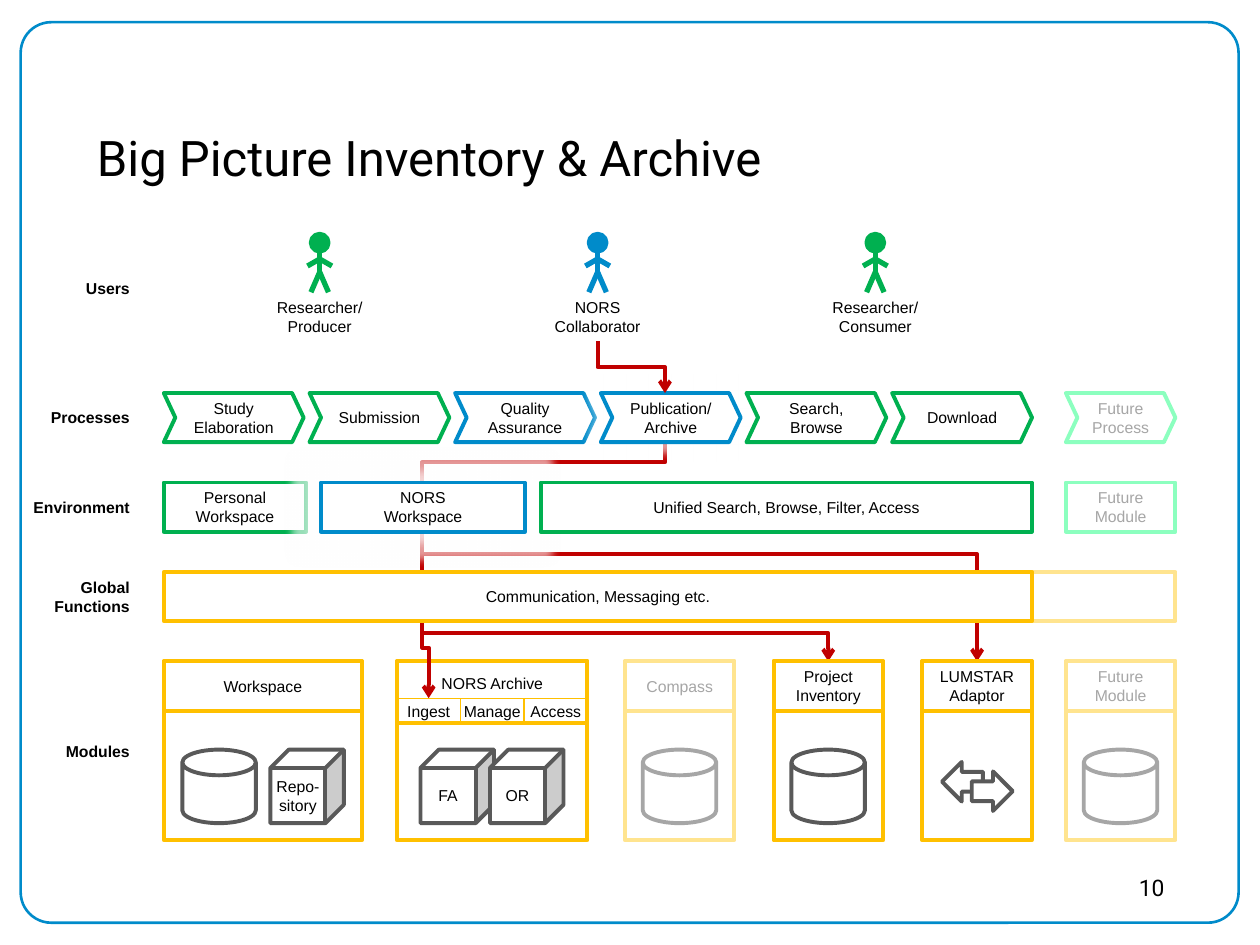
from lxml import etree
from pptx import Presentation
from pptx.dml.color import RGBColor
from pptx.enum.shapes import MSO_CONNECTOR, MSO_SHAPE
from pptx.enum.text import MSO_ANCHOR, PP_ALIGN
from pptx.oxml.ns import qn
from pptx.util import Pt

RECT, CHEVRON, CUBE, CAN = MSO_SHAPE.RECTANGLE, MSO_SHAPE.CHEVRON, MSO_SHAPE.CUBE, MSO_SHAPE.CAN
LEFT_ARROW, OVAL, ROUNDED = MSO_SHAPE.LEFT_ARROW, MSO_SHAPE.OVAL, MSO_SHAPE.ROUNDED_RECTANGLE
STRAIGHT, ELBOW = MSO_CONNECTOR.STRAIGHT, MSO_CONNECTOR.ELBOW
MIDDLE, TOP = MSO_ANCHOR.MIDDLE, MSO_ANCHOR.TOP
LEFT, CENTER, RIGHT = PP_ALIGN.LEFT, PP_ALIGN.CENTER, PP_ALIGN.RIGHT

BLACK = RGBColor(0x00, 0x00, 0x00)
WHITE = RGBColor(0xFF, 0xFF, 0xFF)
BLUE = RGBColor(0x00, 0x8B, 0xCA)
GREEN = RGBColor(0x00, 0xB0, 0x50)
PALE_GREEN = RGBColor(0x8C, 0xFF, 0xBF)
AMBER = RGBColor(0xFF, 0xC0, 0x00)
PALE_AMBER = RGBColor(0xFF, 0xE4, 0x8F)
RED = RGBColor(0xC0, 0x00, 0x00)
DARK_GRAY = RGBColor(0x59, 0x59, 0x59)
GRAY = RGBColor(0xA6, 0xA6, 0xA6)

ROW_HEIGHT = 28.1
PROCESS_TOP, ENVIRONMENT_TOP, GLOBAL_TOP, MODULE_TOP = (224.6 + 51.12 * row for row in range(4))
MODULE_HEIGHT = 102.2
GRID_LEFT, GRID_RIGHT = 93.6, 589.7
FUTURE_LEFT, NARROW = 609.1, 62.6
COMPASS_LEFT, INVENTORY_LEFT, ADAPTOR_LEFT = (357.1 + 84.95 * column for column in range(3))
ICON_TOP, ICON_SIZE = 428.4, 42
ARCHIVE_LEFT, ARCHIVE_WIDTH = 226.8, 108.9
FLOW_X, FLOW_TOP = 241.2, ENVIRONMENT_TOP + ROW_HEIGHT


def write(shape, text, color=BLACK, size=9, font="Arial", bold=False, align=CENTER,
          anchor=MIDDLE, insets=(0, 0, 0, 0), wrap=True):
    frame = shape.text_frame
    frame.word_wrap = wrap
    frame.vertical_anchor = anchor
    (frame.margin_left, frame.margin_top,
     frame.margin_right, frame.margin_bottom) = (Pt(inset) for inset in insets)
    frame.text = text
    for paragraph in frame.paragraphs:
        paragraph.alignment = align
        paragraph.font.name = font
        paragraph.font.size = Pt(size)
        paragraph.font.bold = bold
        paragraph.font.color.rgb = color


def add_block(shapes, kind, left, top, width, height, line, fill=WHITE, weight=2.25):
    block = shapes.add_shape(kind, Pt(left), Pt(top), Pt(width), Pt(height))
    block.shadow.inherit = False
    if fill is None:
        block.fill.background()
    else:
        block.fill.solid()
        block.fill.fore_color.rgb = fill
    block.line.color.rgb = line
    block.line.width = Pt(weight)
    return block


def add_step(shapes, kind, left, top, width, text, line, color=BLACK):
    step = add_block(shapes, kind, left, top, width, ROW_HEIGHT, line)
    if kind == CHEVRON:
        step.adjustments[0] = 0.235
    write(step, text, color, insets=(7.9, 4.3, 7.9, 4.3))
    return step


def add_glow(shape):
    effects = shape._element.spPr.find(qn("a:effectLst"))
    glow = etree.SubElement(effects, qn("a:glow"), rad=str(Pt(10)))
    tint = etree.SubElement(glow, qn("a:srgbClr"), val=str(WHITE))
    etree.SubElement(tint, qn("a:alpha"), val="60000")


def add_label(shapes, left, top, width, height, text, **style):
    label = shapes.add_textbox(Pt(left), Pt(top), Pt(width), Pt(height))
    write(label, text, **{"insets": (7.9, 4.3, 7.9, 4.3), **style})


def add_line(shapes, kind, start, end, color, weight):
    line = shapes.add_connector(kind, *(Pt(value) for value in start + end))
    line.line.color.rgb = color
    line.line.width = Pt(weight)
    etree.SubElement(line._element.spPr, qn("a:effectLst"))
    return line


def add_flow(shapes, start, end, bend=0.5, arrow=True):
    flow = add_line(shapes, ELBOW, start, end, RED, 2.25)
    run, drop = abs(end[0] - start[0]), end[1] - start[1]
    flow.left = Pt((start[0] + end[0] - drop) / 2)
    flow.top = Pt((start[1] + end[1] - run) / 2)
    flow.width, flow.height = Pt(drop), Pt(run)
    properties = flow._element.spPr
    transform = properties.find(qn("a:xfrm"))
    transform.attrib.clear()
    if end[0] > start[0]:
        transform.set("rot", "16200000")
        transform.set("flipH", "1")
    else:
        transform.set("rot", "5400000")
    guides = properties.find(qn("a:prstGeom")).find(qn("a:avLst"))
    etree.SubElement(guides, qn("a:gd"), name="adj1", fmla=f"val {round(bend * 100000)}")
    if arrow:
        etree.SubElement(properties.find(qn("a:ln")), qn("a:tailEnd"), type="arrow")


def add_user(slide, center, role, color):
    shapes = slide.shapes.add_group_shape().shapes
    add_block(shapes, OVAL, center - 4.7, 134, 9.4, 9.4, color, color, 3)
    shoulder, hip = (center, 148), (center, 155.5)
    add_line(shapes, STRAIGHT, (center, 144), hip, color, 3)
    for side in (-1, 1):
        add_line(shapes, STRAIGHT, hip, (center + side * 5, 167), color, 3)
        add_line(shapes, STRAIGHT, shoulder, (center + side * 7, 152), color, 3)
    add_label(shapes, center - 39.6, 167, 79.2, 28.1, role, wrap=False)


def add_module(slide, left, width, name, line=AMBER, color=BLACK):
    shapes = slide.shapes.add_group_shape().shapes
    add_block(shapes, RECT, left, MODULE_TOP, width, MODULE_HEIGHT, line)
    header = add_block(shapes, RECT, left, MODULE_TOP, width, ROW_HEIGHT, line)
    write(header, name, color)
    return shapes


def add_can(shapes, left, line=DARK_GRAY):
    can = add_block(shapes, CAN, left, ICON_TOP, ICON_SIZE, ICON_SIZE, line)
    can.adjustments[0] = 0.349


def add_cube(shapes, left, text):
    write(add_block(shapes, CUBE, left, ICON_TOP, ICON_SIZE, ICON_SIZE, DARK_GRAY), text)


def add_archive(slide):
    shapes = slide.shapes.add_group_shape().shapes
    add_block(shapes, RECT, ARCHIVE_LEFT, MODULE_TOP, ARCHIVE_WIDTH, MODULE_HEIGHT, AMBER)
    add_cube(shapes, 240.3, "FA")
    add_cube(shapes, 280, "OR")
    width = ARCHIVE_WIDTH / 3
    for column, name in enumerate(("Ingest", "Manage", "Access")):
        part = add_block(shapes, RECT, ARCHIVE_LEFT + column * width, 399, width, 14.2, AMBER,
                         weight=0.75)
        write(part, name)
    header = add_block(shapes, RECT, ARCHIVE_LEFT, MODULE_TOP, ARCHIVE_WIDTH, 35.2, AMBER, None)
    write(header, "NORS Archive", insets=(0, 0, 0, 10.5))


def add_processes(shapes):
    steps = (("Study\nElaboration", GREEN), ("Submission", GREEN), ("Quality Assurance", BLUE),
             ("Publication/Archive", BLUE), ("Search, Browse", GREEN), ("Download", GREEN))
    width = 79.9
    pitch = (GRID_RIGHT - GRID_LEFT - width) / (len(steps) - 1)
    for column, (name, line) in enumerate(steps):
        step = add_step(shapes, CHEVRON, GRID_LEFT + column * pitch, PROCESS_TOP, width, name, line)
        if name.startswith("Publication"):
            add_glow(step)
    add_step(shapes, CHEVRON, FUTURE_LEFT, PROCESS_TOP, NARROW, "Future Process", PALE_GREEN, GRAY)


def add_environment(shapes):
    add_step(shapes, RECT, GRID_LEFT, ENVIRONMENT_TOP, 81.4, "Personal\nWorkspace", GREEN)
    add_glow(add_step(shapes, RECT, 183.4, ENVIRONMENT_TOP, 116.6, "NORS\nWorkspace", BLUE))
    add_step(shapes, RECT, 309, ENVIRONMENT_TOP, GRID_RIGHT - 309,
             "Unified Search, Browse, Filter, Access", GREEN)
    add_step(shapes, RECT, FUTURE_LEFT, ENVIRONMENT_TOP, NARROW, "Future\nModule", PALE_GREEN, GRAY)


def add_modules(slide):
    workspace = add_module(slide, GRID_LEFT, 113.2, "Workspace")
    add_can(workspace, 104.2)
    add_cube(workspace, 154.5, "Repo-\vsitory")
    for left, name, line, color, icon in (
            (COMPASS_LEFT, "Compass", PALE_AMBER, GRAY, GRAY),
            (INVENTORY_LEFT, "Project\nInventory", AMBER, BLACK, DARK_GRAY),
            (FUTURE_LEFT, "Future\nModule", PALE_AMBER, GRAY, GRAY)):
        add_can(add_module(slide, left, NARROW, name, line, color), left + 10.2, icon)
    adaptor = add_module(slide, ADAPTOR_LEFT, NARROW, "LUMSTAR\nAdaptor")
    add_block(adaptor, LEFT_ARROW, 538.3, 435.4, 23.4, 22.6, DARK_GRAY)
    add_block(adaptor, LEFT_ARROW, 555.3, 440.8, 23.4, 22.6, DARK_GRAY).rotation = 180


def main():
    presentation = Presentation()
    presentation.slide_width, presentation.slide_height = Pt(720), Pt(540)
    slide = presentation.slides.add_slide(presentation.slide_layouts[5])
    shapes = slide.shapes

    title = shapes.title
    title.left, title.top, title.width, title.height = Pt(48.2), Pt(65), Pt(624), Pt(49)
    write(title, "Big Picture Inventory & Archive", size=28, font="Roboto", align=LEFT,
          insets=(7.2, 3.6, 7.2, 3.6))
    add_block(shapes, ROUNDED, 11.8, 12.7, 696, 514.6, BLUE, None, 1.5).adjustments[0] = 0.034

    flow_start = (FLOW_X, FLOW_TOP)
    add_flow(shapes, flow_start, (ADAPTOR_LEFT + NARROW / 2, MODULE_TOP), 0.174)
    add_flow(shapes, flow_start, (INVENTORY_LEFT + NARROW / 2, MODULE_TOP), 0.784)
    add_archive(slide)
    add_flow(shapes, (380, PROCESS_TOP + ROW_HEIGHT), (FLOW_X, ENVIRONMENT_TOP), arrow=False)
    add_flow(shapes, flow_start, (244.9, 399), 0.696)

    add_environment(shapes)
    add_processes(shapes)
    add_block(shapes, RECT, 578.2, GLOBAL_TOP, 93.5, ROW_HEIGHT, PALE_AMBER)
    add_step(shapes, RECT, GRID_LEFT, GLOBAL_TOP, GRID_RIGHT - GRID_LEFT,
             "Communication, Messaging etc.", AMBER)
    add_modules(slide)

    for center, role, color in ((182.7, "Researcher/\vProducer", GREEN),
                                (341.5, "NORS Collaborator", BLUE),
                                (500.2, "Researcher/\vConsumer", GREEN)):
        add_user(slide, center, role, color)
    add_flow(shapes, (341.5, 195.1), (380, PROCESS_TOP))

    for name, top, height in (("Users", 134, 61.2), ("Processes", PROCESS_TOP, ROW_HEIGHT),
                              ("Environment", ENVIRONMENT_TOP, ROW_HEIGHT),
                              ("Global\nFunctions", GLOBAL_TOP, ROW_HEIGHT),
                              ("Modules", MODULE_TOP, MODULE_HEIGHT)):
        add_label(shapes, 0, top, 82, height, name, bold=True, align=RIGHT)
    add_label(shapes, 606.2, 496, 66.2, 22.3, "10", size=13, font="Roboto", align=RIGHT,
              anchor=TOP, insets=(7.2, 3.6, 7.2, 3.6))
    presentation.save("out.pptx")


if __name__ == "__main__":
    main()
